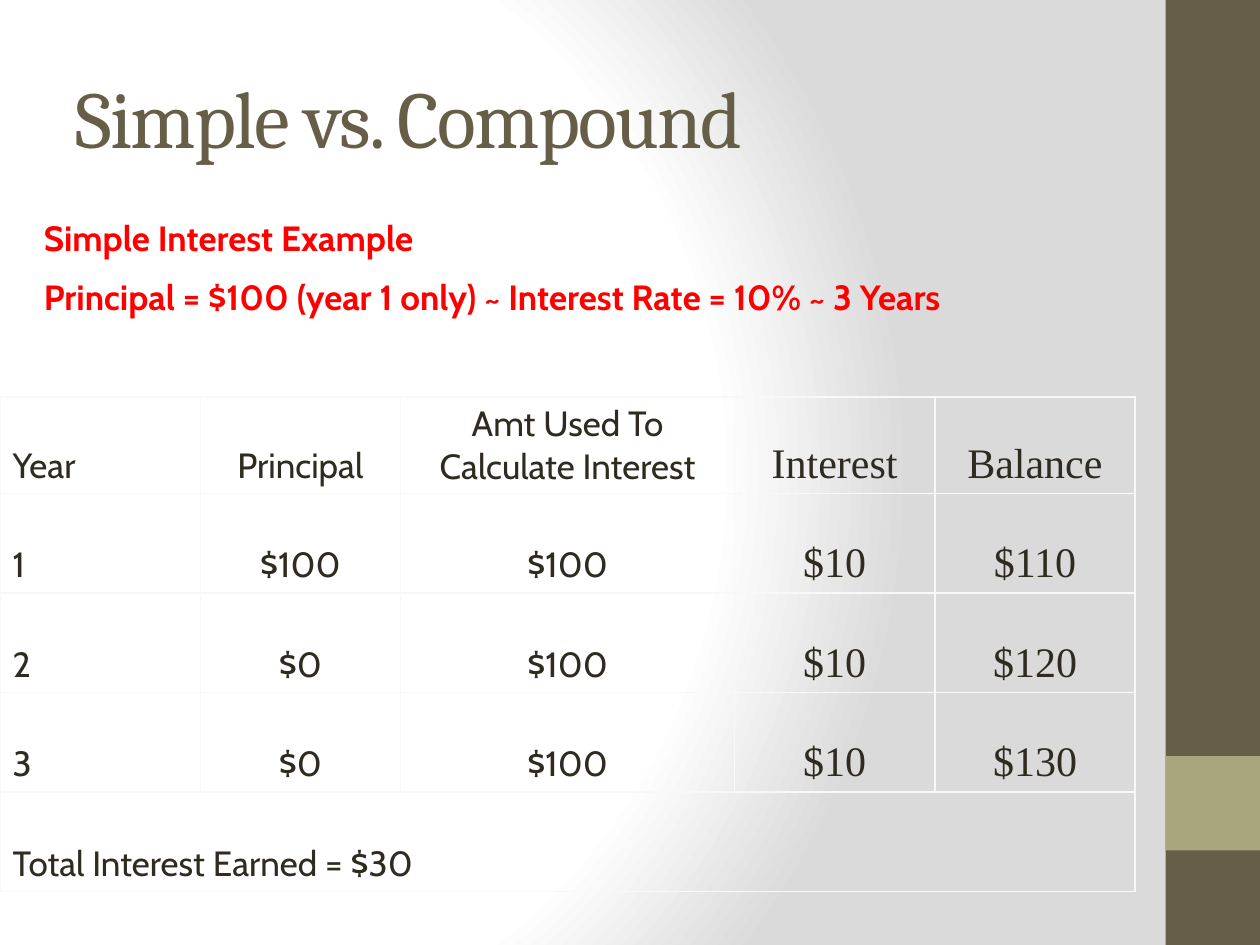
import pptx
import pptx.dml.color
import pptx.enum.shapes
import pptx.enum.text
import pptx.oxml
import pptx.oxml.ns
import pptx.util
from lxml import etree

WIDTH, HEIGHT = 10, 7.5
BROWN, OLIVE, INK, RED, BORDER = "675E47", "A9A57C", "2F2B20", "FF0000", "F8F8F8"
GRADIENT = [(0, "FFFFFF"), (75, "FFFFFF"), (100, "DADADA")]
COLUMNS = [1.59, 1.59, 2.65, 1.59, 1.59]
ROWS = [0.69] + [0.79] * 4
TABLE = [
    ["Year", "Principal", "Amt Used To Calculate Interest", "Interest", "Balance"],
    ["1", "$100", "$100", "$10", "$110"],
    ["2", "$0", "$100", "$10", "$120"],
    ["3", "$0", "$100", "$10", "$130"],
    ["Total Interest Earned = $30"],
]
ALIGN = pptx.enum.text.PP_ALIGN
ANCHOR = pptx.enum.text.MSO_ANCHOR


def color(value):
    return pptx.dml.color.RGBColor.from_string(value)


def box(left, top, width, height):
    """Turn shares of the slide's size into lengths."""
    shares = (left * WIDTH, top * HEIGHT, width * WIDTH, height * HEIGHT)
    return [pptx.util.Inches(share) for share in shares]


def style(paragraph, font_name, size, value, bold=False):
    for run in paragraph.runs:
        run.font.name = font_name
        run.font.size = pptx.util.Pt(size)
        run.font.color.rgb = color(value)
        run.font.bold = bold


def set_background(slide):
    stops = "".join(
        f'<a:gs pos="{position * 1000}"><a:srgbClr val="{value}"/></a:gs>'
        for position, value in GRADIENT
    )
    background = pptx.oxml.parse_xml(
        f'<p:bg {pptx.oxml.ns.nsdecls("p", "a")}><p:bgPr>'
        f'<a:gradFill rotWithShape="1"><a:gsLst>{stops}</a:gsLst>'
        '<a:path path="circle">'
        '<a:fillToRect l="20000" t="50000" r="100000" b="50000"/>'
        "</a:path></a:gradFill><a:effectLst/></p:bgPr></p:bg>"
    )
    slide.element.cSld.insert(0, background)


def add_block(slide, area, fill):
    rectangle = pptx.enum.shapes.MSO_SHAPE.RECTANGLE
    shape = slide.shapes.add_shape(rectangle, *box(*area))
    shape.shadow.inherit = False
    shape.fill.solid()
    shape.fill.fore_color.rgb = color(fill)
    shape.line.fill.background()


def add_text(slide, area, text, font_name, size, value, bold=False, anchor=ANCHOR.TOP):
    text_frame = slide.shapes.add_textbox(*box(*area)).text_frame
    text_frame.word_wrap = True
    text_frame.vertical_anchor = anchor
    text_frame.text = text
    for paragraph in text_frame.paragraphs:
        style(paragraph, font_name, size, value, bold)
    return text_frame


def set_borders(cell):
    properties = cell._tc.get_or_add_tcPr()
    for position, side in enumerate(("lnL", "lnR", "lnT", "lnB")):
        line = etree.Element(pptx.oxml.ns.qn(f"a:{side}"), w=str(pptx.util.Pt(1)))
        fill = etree.SubElement(line, pptx.oxml.ns.qn("a:solidFill"))
        etree.SubElement(fill, pptx.oxml.ns.qn("a:srgbClr"), val=BORDER)
        properties.insert(position, line)


def fill_cell(cell, text, column):
    cell.text = text
    cell.vertical_anchor = ANCHOR.BOTTOM
    paragraph = cell.text_frame.paragraphs[0]
    paragraph.alignment = ALIGN.CENTER if column else ALIGN.LEFT
    font_name, size = ("Times New Roman", 24) if column >= 3 else ("Cabin", 20)
    style(paragraph, font_name, size, INK)


def add_interest_table(slide):
    area = box(0, 0.42, sum(COLUMNS) / WIDTH, sum(ROWS) / HEIGHT)
    table = slide.shapes.add_table(len(ROWS), len(COLUMNS), *area).table
    table.first_row = table.horz_banding = False
    for column, width in zip(table.columns, COLUMNS):
        column.width = pptx.util.Inches(width)
    for row, height in zip(table.rows, ROWS):
        row.height = pptx.util.Inches(height)
    for cell in table.iter_cells():
        cell.fill.background()
        set_borders(cell)
    last = len(ROWS) - 1
    table.cell(last, 0).merge(table.cell(last, len(COLUMNS) - 1))
    for row, texts in enumerate(TABLE):
        for column, text in enumerate(texts):
            fill_cell(table.cell(row, column), text, column)


def main():
    presentation = pptx.Presentation()
    presentation.slide_width = pptx.util.Inches(WIDTH)
    presentation.slide_height = pptx.util.Inches(HEIGHT)
    slide = presentation.slides.add_slide(presentation.slide_layouts[6])
    set_background(slide)
    add_block(slide, (0.925, 0, 0.075, 1), BROWN)
    add_block(slide, (0.925, 0.8, 0.075, 0.1), OLIVE)

    title = add_text(slide, (0.05, 0.04, 0.833, 1 / 6), "Simple vs. Compound",
                     "Cambria", 46, BROWN, anchor=ANCHOR.MIDDLE)
    title.paragraphs[0].runs[0].font._element.set("spc", "-100")

    add_interest_table(slide)
    example = add_text(
        slide, (0.025, 0.223, 0.975, 0.125),
        "Simple Interest Example\n"
        "Principal = $100 (year 1 only) ~ Interest Rate = 10% ~ 3 Years",
        "Cabin", 20, RED, bold=True)
    example.paragraphs[1].space_before = pptx.util.Pt(9.5)
    presentation.save("out.pptx")


if __name__ == "__main__":
    main()
